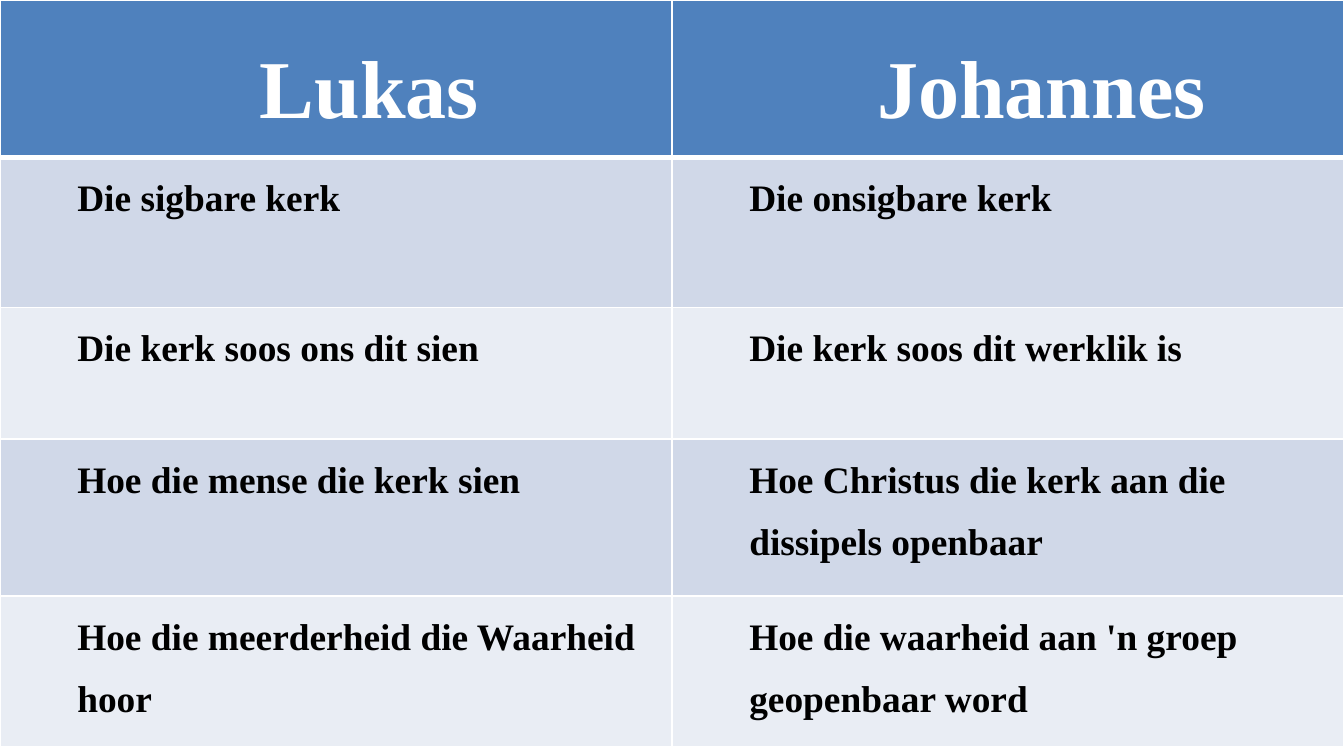
import pptx
import pptx.dml.color
import pptx.enum.text
import pptx.oxml
import pptx.oxml.ns
import pptx.util

Cm, Pt = pptx.util.Cm, pptx.util.Pt
RGB = pptx.dml.color.RGBColor
ALIGN = pptx.enum.text.PP_ALIGN

COLORS = {
    "header": "4F81BD",
    "band_dark": "D0D8E8",
    "band_light": "E9EDF4",
    "border": "FFFFFF",
    "header_text": "FFFFFF",
    "body_text": "000000",
}
ROWS = [
    ("Lukas", "Johannes"),
    ("Die sigbare kerk", "Die onsigbare kerk"),
    ("Die kerk soos ons dit sien", "Die kerk soos dit werklik is"),
    ("Hoe die mense die kerk sien",
     "Hoe Christus die kerk aan die dissipels openbaar"),
    ("Hoe die meerderheid die Waarheid hoor",
     "Hoe die waarheid aan 'n groep geopenbaar word"),
]
HEIGHTS = [2.97, 2.84, 2.49, 2.97, 2.84]
COL_WIDTH = 12.7
CELL_FORMAT = {
    "margin_left": Cm(0.19),
    "margin_right": Cm(0.19),
    "margin_top": 0,
    "margin_bottom": 0,
}
FONT_FORMAT = {"name": "Times New Roman", "bold": True}


def set_borders(cell, widths):
    """Draw the cell's borders; widths maps L, R, T, B, in that order, to points."""
    tcPr = cell._tc.get_or_add_tcPr()
    for i, (side, width) in enumerate(widths.items()):
        tcPr.insert(i, pptx.oxml.parse_xml(
            f'<a:ln{side} {pptx.oxml.ns.nsdecls("a")} w="{Pt(width)}">'
            f'<a:solidFill><a:srgbClr val="{COLORS["border"]}"/></a:solidFill>'
            f'</a:ln{side}>'))


prs = pptx.Presentation()
prs.slide_width, prs.slide_height = Cm(25.4), Cm(14.29)
s = prs.slides.add_slide(prs.slide_layouts[6])

table = s.shapes.add_table(len(ROWS), 2, 0, 0, Cm(2 * COL_WIDTH),
                           Cm(sum(HEIGHTS))).table
for col in table.columns:
    col.width = Cm(COL_WIDTH)

for i, (texts, height) in enumerate(zip(ROWS, HEIGHTS)):
    table.rows[i].height = Cm(height)
    is_header = i == 0
    fill = "header" if is_header else "band_dark" if i % 2 else "band_light"
    for j, text in enumerate(texts):
        cell = table.cell(i, j)
        for name, value in CELL_FORMAT.items():
            setattr(cell, name, value)
        cell.fill.solid()
        cell.fill.fore_color.rgb = RGB.from_string(COLORS[fill])
        set_borders(cell, {"L": 1, "R": 1, "T": 3 if i == 1 else 1,
                           "B": 3 if is_header else 1})

        p = cell.text_frame.paragraphs[0]
        p.alignment = ALIGN.CENTER if is_header else ALIGN.LEFT
        p.line_spacing = 1.5
        pPr = p._p.get_or_add_pPr()
        pPr.set("marL", str(Cm(1.27)))
        pPr.set("indent", "0")
        r = p.add_run()
        r.text = text
        for name, value in FONT_FORMAT.items():
            setattr(r.font, name, value)
        r.font.size = Pt(44 if is_header else 20)
        r.font.color.rgb = RGB.from_string(
            COLORS["header_text" if is_header else "body_text"])

prs.save("out.pptx")
